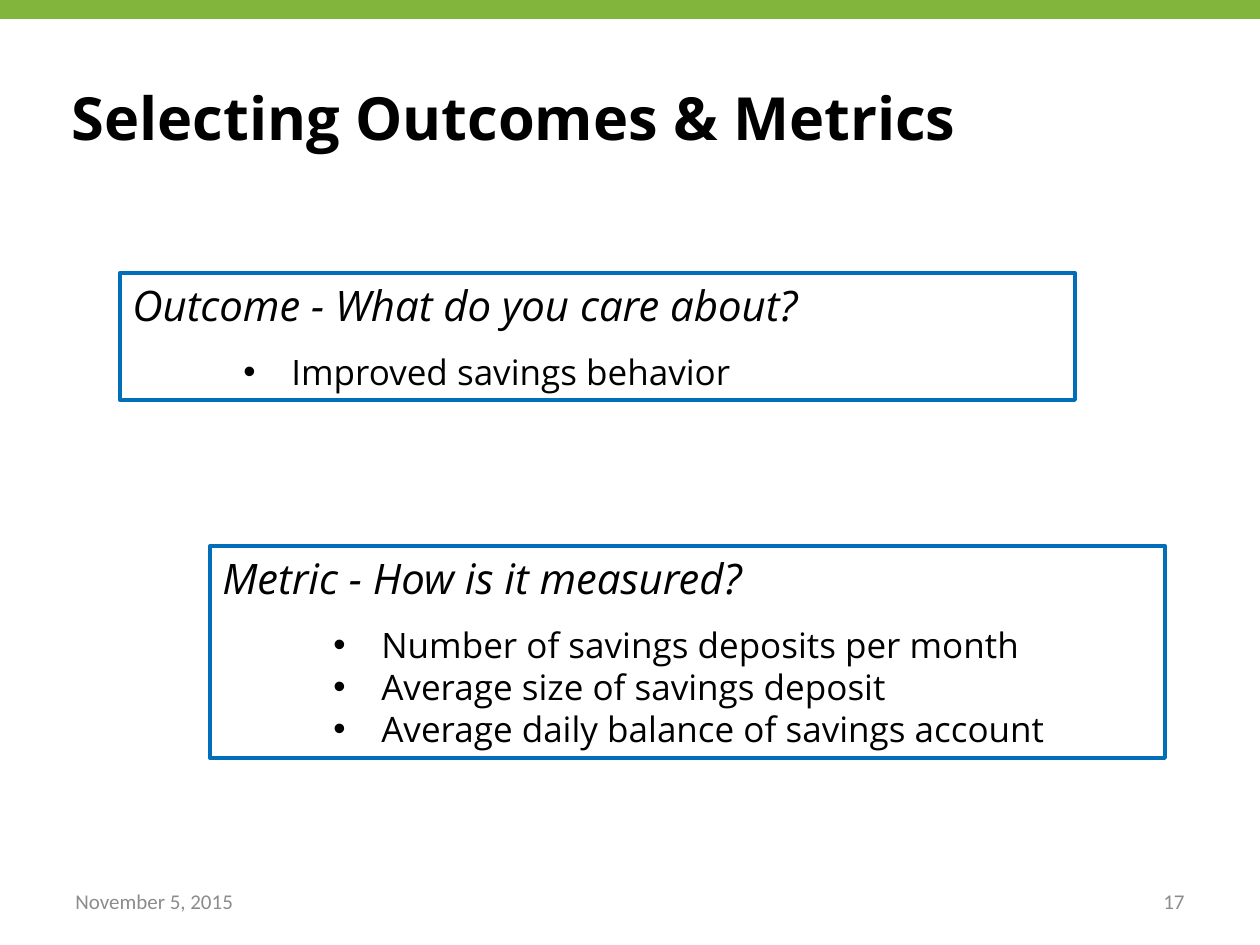
import pptx
import pptx.util
import pptx.dml.color
import pptx.enum.shapes
import pptx.enum.text
import pptx.oxml.ns
from lxml import etree

# Content
TITLE = "Selecting Outcomes & Metrics"
CARDS = [
    {"box": (120, 273, 955, 127), "heading": "Outcome - What do you care about?",
     "bullets": ["Improved savings behavior"]},
    {"box": (210, 546, 955, 212), "heading": "Metric - How is it measured?",
     "bullets": ["Number of savings deposits per month",
                 "Average size of savings deposit",
                 "Average daily balance of savings account"]},
]
FOOTERS = [("November 5, 2015", 63, "LEFT"), ("17", 903, "RIGHT")]

# Formats
COLORS = {"bar": "81B53C", "border": "006EB9", "text": "000000", "footer": "8C8C8C"}
TITLE_FONT = {"name": "Open Sans", "size": 34, "bold": True, "color": "text"}
HEADING_FONT = {"name": "Open Sans", "size": 24, "italic": True, "color": "text"}
BULLET_FONT = {"name": "Open Sans", "size": 20, "italic": False, "color": "text"}
FOOTER_FONT = {"name": "Calibri", "size": 12, "color": "footer"}
SCALE = 914400 / 126
ALIGN = pptx.enum.text.PP_ALIGN
ANCHOR = pptx.enum.text.MSO_ANCHOR
RECT = pptx.enum.shapes.MSO_SHAPE.RECTANGLE


def px(n):
    return pptx.util.Emu(round(n * SCALE))


def color(key):
    return pptx.dml.color.RGBColor.from_string(COLORS[key])


def write(p, text, fmt, align="LEFT"):
    p.alignment = getattr(ALIGN, align)
    r = p.add_run()
    r.text = text
    for key, value in fmt.items():
        if key == "color":
            r.font.color.rgb = color(value)
        else:
            setattr(r.font, key, pptx.util.Pt(value) if key == "size" else value)


def add_bullet(p):
    pPr = p._p.get_or_add_pPr()
    pPr.set("marL", str(px(159)))
    pPr.set("indent", str(-px(48)))
    qn = pptx.oxml.ns.qn
    etree.SubElement(pPr, qn("a:buFont")).set("typeface", "Arial")
    etree.SubElement(pPr, qn("a:buChar")).set("char", "•")


def add_rect(s, box):
    sp = s.shapes.add_shape(RECT, *map(px, box))
    sp.shadow.inherit = False
    return sp


prs = pptx.Presentation()
prs.slide_width, prs.slide_height = px(1260), px(945)
s = prs.slides.add_slide(prs.slide_layouts[5])

# Top bar
bar = add_rect(s, (0, 0, 1260, 19))
bar.fill.solid()
bar.fill.fore_color.rgb = color("bar")
bar.line.fill.background()

# Title
title = s.shapes.title
title.left, title.top, title.width, title.height = map(px, (63, 38, 1134, 157))
tf = title.text_frame
tf.vertical_anchor = ANCHOR.MIDDLE
tf.margin_left = tf.margin_right = px(9)
tf.margin_top = tf.margin_bottom = px(5)
write(tf.paragraphs[0], TITLE, TITLE_FONT)

# Outlined cards: heading, then bullets
for card in CARDS:
    sp = add_rect(s, card["box"])
    sp.fill.background()
    sp.line.color.rgb = color("border")
    sp.line.width = pptx.util.Pt(2.25)
    tf = sp.text_frame
    tf.word_wrap = True
    tf.auto_size = pptx.enum.text.MSO_AUTO_SIZE.SHAPE_TO_FIT_TEXT
    tf.vertical_anchor = ANCHOR.TOP
    heading = tf.paragraphs[0]
    heading.space_after = pptx.util.Pt(12)
    write(heading, card["heading"], HEADING_FONT)
    for text in card["bullets"]:
        p = tf.add_paragraph()
        add_bullet(p)
        write(p, text, BULLET_FONT)

# Date and slide number
for text, left, align in FOOTERS:
    tf = s.shapes.add_textbox(px(left), px(876), px(294), px(50)).text_frame
    tf.word_wrap = True
    tf.vertical_anchor = ANCHOR.MIDDLE
    write(tf.paragraphs[0], text, FOOTER_FONT, align)

prs.save("out.pptx")
